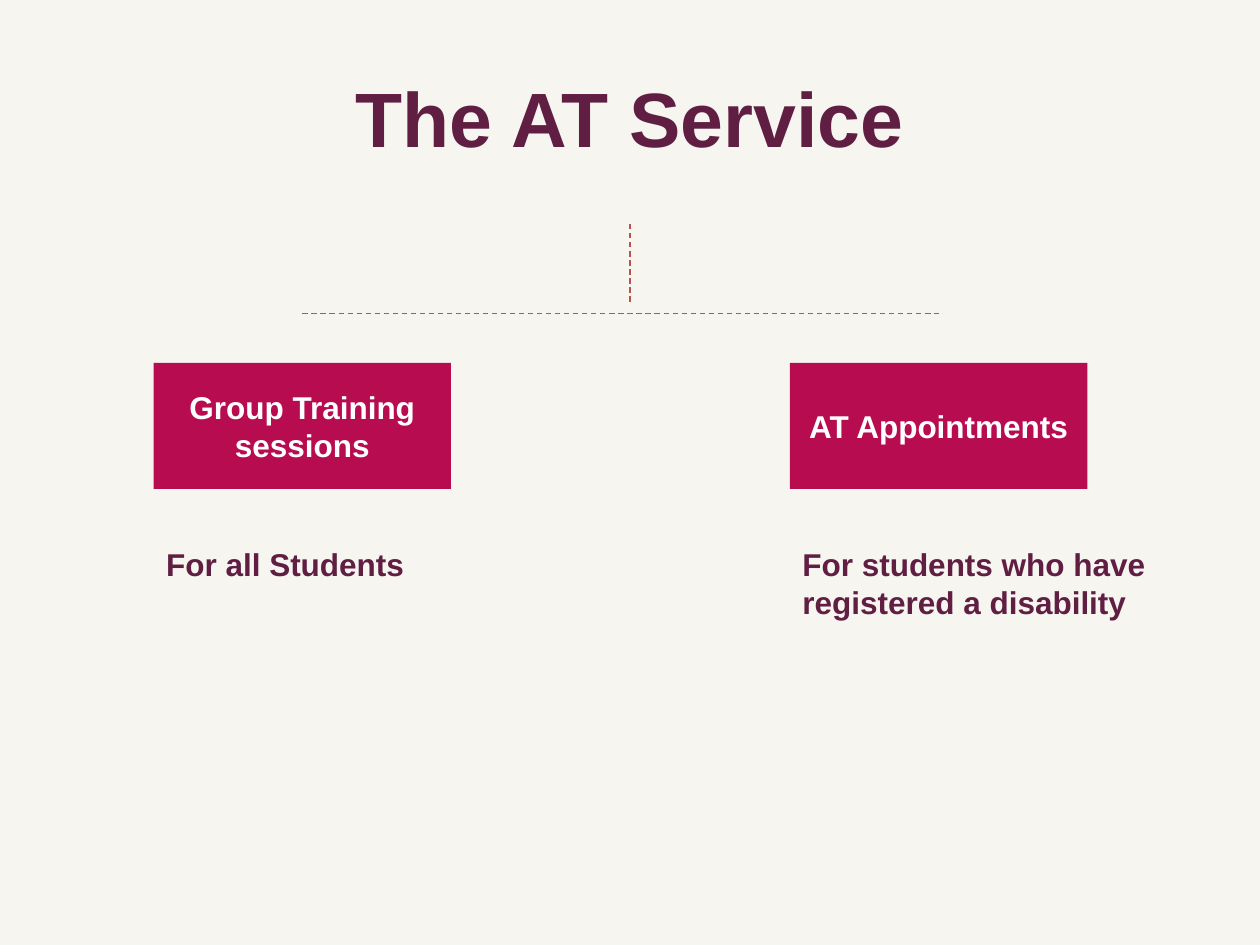
from dataclasses import dataclass

from lxml import etree
from pptx import Presentation
from pptx.dml.color import RGBColor
from pptx.enum.dml import MSO_LINE
from pptx.enum.shapes import MSO_CONNECTOR, MSO_SHAPE
from pptx.enum.text import MSO_ANCHOR, MSO_AUTO_SIZE, PP_ALIGN
from pptx.oxml.ns import qn
from pptx.util import Inches, Pt

DASH = MSO_LINE.DASH
STRAIGHT = MSO_CONNECTOR.STRAIGHT
RECTANGLE = MSO_SHAPE.RECTANGLE
MIDDLE, TOP = MSO_ANCHOR.MIDDLE, MSO_ANCHOR.TOP
GROW, FIXED = MSO_AUTO_SIZE.SHAPE_TO_FIT_TEXT, MSO_AUTO_SIZE.NONE
LEFT, CENTER = PP_ALIGN.LEFT, PP_ALIGN.CENTER


@dataclass(frozen=True)
class Theme:
    paper: RGBColor = RGBColor(0xF6, 0xF5, 0xF0)
    title: RGBColor = RGBColor(0x5F, 0x1E, 0x42)
    note: RGBColor = RGBColor(0x60, 0x1E, 0x42)
    branch: RGBColor = RGBColor(0xB7, 0x0D, 0x50)
    label: RGBColor = RGBColor(0xFF, 0xFF, 0xFF)
    line: RGBColor = RGBColor(0xC0, 0x50, 0x4D)
    font: str = "Arial"
    title_size: Pt = Pt(44)
    body_size: Pt = Pt(18)
    line_width: Pt = Pt(0.75)


THEME = Theme()

# Label, note lines and note width of each branch
BRANCHES = [
    ("Group Training sessions", ["For all Students"], 2.18),
    ("AT Appointments", ["For students who have", "registered a disability"], 3.02),
]
BRANCH_LEFT, BRANCH_STEP = 1.22, 5.05
BRANCH_TOP, BRANCH_WIDTH, BRANCH_HEIGHT = 2.88, 2.36, 1
NOTE_DROP = 1.4


def set_values(target, values):
    for name, value in values.items():
        setattr(target, name, value)


def write(shape, lines, size, color, align, frame_values):
    frame = shape.text_frame
    set_values(frame, frame_values)
    for index, line in enumerate(lines):
        para = frame.paragraphs[0] if index == 0 else frame.add_paragraph()
        para.alignment = align
        span = para.add_run()
        span.text = line
        set_values(span.font, {"name": THEME.font, "size": size, "bold": True})
        span.font.color.rgb = color


def add_title(page, left, top, width, height):
    title = page.shapes.title
    set_values(title, {"left": Inches(left), "top": Inches(top),
                       "width": Inches(width), "height": Inches(height)})
    write(title, ["The AT Service"], THEME.title_size, THEME.title, CENTER,
          {"vertical_anchor": MIDDLE, "word_wrap": True, "auto_size": FIXED})


def add_dashed_line(page, x1, y1, x2, y2):
    line = page.shapes.add_connector(
        STRAIGHT, Inches(x1), Inches(y1), Inches(x2), Inches(y2))
    line.line.color.rgb = THEME.line
    set_values(line.line, {"width": THEME.line_width, "dash_style": DASH})
    etree.SubElement(line._element.spPr, qn("a:effectLst"))


def add_tree_lines(page, left, top, width, height):
    # Trunk below the title, then the bar that spans the branch centres
    center, gap = 5, 0.08
    bottom = top + height
    add_dashed_line(page, center, top, center, bottom - gap)
    add_dashed_line(page, left, bottom, left + width, bottom)


def add_branch(page, left, top, width, height, label, note, note_width):
    # Filled box
    box = page.shapes.add_shape(
        RECTANGLE, Inches(left), Inches(top), Inches(width), Inches(height))
    box.shadow.inherit = False
    box.fill.solid()
    box.fill.fore_color.rgb = THEME.branch
    box.line.fill.background()
    write(box, [label], THEME.body_size, THEME.label, CENTER,
          {"vertical_anchor": MIDDLE, "word_wrap": True})

    # Note under the box
    note_height = 0.4 + 0.31 * (len(note) - 1)
    note_box = page.shapes.add_textbox(
        Inches(left), Inches(top + NOTE_DROP), Inches(note_width), Inches(note_height))
    write(note_box, note, THEME.body_size, THEME.note, LEFT,
          {"vertical_anchor": TOP, "word_wrap": False, "auto_size": GROW})


def main():
    deck = Presentation()
    set_values(deck, {"slide_width": Inches(10), "slide_height": Inches(7.5)})
    page = deck.slides.add_slide(deck.slide_layouts.get_by_name("Title Only"))
    page.background.fill.solid()
    page.background.fill.fore_color.rgb = THEME.paper

    add_title(page, 0.5, 0.3, 9, 1.25)
    add_tree_lines(page, BRANCH_LEFT + BRANCH_WIDTH / 2, 1.78, BRANCH_STEP, 0.71)
    for index, branch in enumerate(BRANCHES):
        add_branch(page, BRANCH_LEFT + index * BRANCH_STEP, BRANCH_TOP,
                   BRANCH_WIDTH, BRANCH_HEIGHT, *branch)
    deck.save("out.pptx")


if __name__ == "__main__":
    main()
